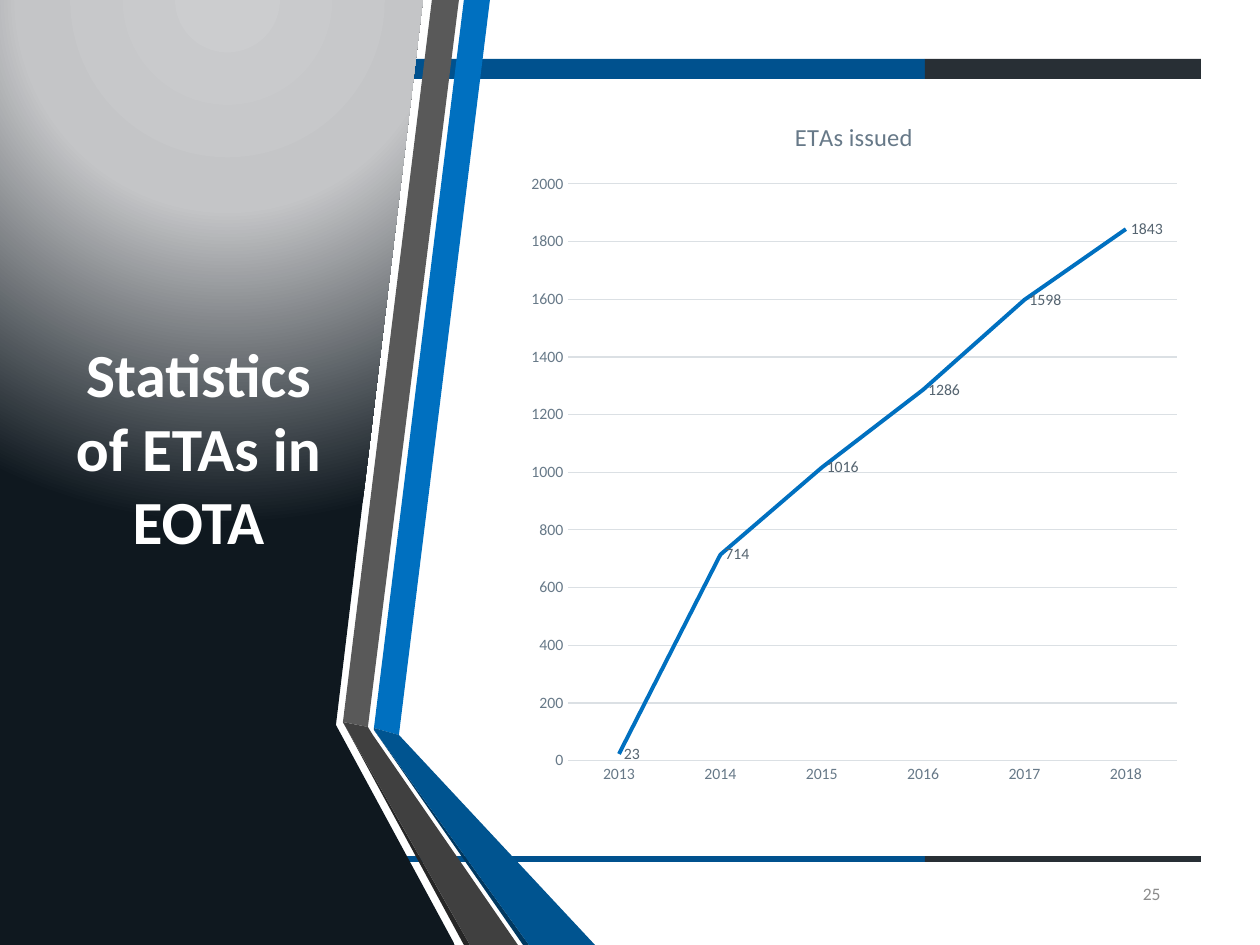
from lxml import etree
from pptx import Presentation
from pptx.chart.data import CategoryChartData
from pptx.dml.color import RGBColor
from pptx.enum.chart import XL_CHART_TYPE, XL_LABEL_POSITION, XL_MARKER_STYLE, XL_TICK_MARK
from pptx.enum.shapes import MSO_SHAPE
from pptx.enum.text import MSO_ANCHOR, MSO_AUTO_SIZE, PP_ALIGN
from pptx.oxml import parse_xml
from pptx.oxml.ns import nsdecls, qn
from pptx.util import Emu, Inches, Pt

EMU_PER_PX = 914400 / 126
FONT = "Calibri"
RECTANGLE = MSO_SHAPE.RECTANGLE
LINE_CHART = XL_CHART_TYPE.LINE
LABEL_RIGHT = XL_LABEL_POSITION.RIGHT
NO_MARKER = XL_MARKER_STYLE.NONE
NO_TICK = XL_TICK_MARK.NONE
MIDDLE = MSO_ANCHOR.MIDDLE
FIXED_SIZE = MSO_AUTO_SIZE.NONE
CENTER, RIGHT = PP_ALIGN.CENTER, PP_ALIGN.RIGHT

WHITE = RGBColor(0xFF, 0xFF, 0xFF)
BAR_BLUE = RGBColor(0x00, 0x51, 0x8E)
INK = RGBColor(0x28, 0x2F, 0x35)
BLUE = RGBColor(0x00, 0x70, 0xC0)
FOLD_BLUE = RGBColor(0x00, 0x54, 0x90)
NAVY = RGBColor(0x00, 0x38, 0x60)
GRAY = RGBColor(0x59, 0x59, 0x59)
FOLD_GRAY = RGBColor(0x40, 0x40, 0x40)
CHARCOAL = RGBColor(0x26, 0x26, 0x26)
NUMBER_GRAY = RGBColor(0x8C, 0x8C, 0x8C)
AXIS_TEXT = RGBColor(0x67, 0x79, 0x88)
LABEL_TEXT = RGBColor(0x55, 0x64, 0x70)
GRID = RGBColor(0xDB, 0xE0, 0xE4)
PANEL_STOPS = [
    (0, RGBColor(0xCC, 0xCD, 0xCF)),
    (40, RGBColor(0xC4, 0xC5, 0xC7)),
    (100, RGBColor(0x0F, 0x18, 0x1F)),
]


def px(value):
    return Emu(round(value * EMU_PER_PX))


class SlideBuilder:
    def __init__(self, slide):
        self.slide = slide
        self.shapes = slide.shapes

    def style_font(self, font, size, color, bold=False):
        font.name, font.size, font.bold = FONT, Pt(size), bold
        font.color.rgb = color

    def paint(self, shape, color):
        shape.shadow.inherit = False
        shape.fill.solid()
        shape.fill.fore_color.rgb = color
        shape.line.fill.background()

    def bar(self, left, top, width, height, color):
        shape = self.shapes.add_shape(RECTANGLE, px(left), px(top), px(width), px(height))
        self.paint(shape, color)

    def polygon(self, points, color):
        builder = self.shapes.build_freeform(*points[0], scale=EMU_PER_PX)
        builder.add_line_segments(points[1:], close=True)
        shape = builder.convert_to_shape()
        self.paint(shape, color)
        return shape

    def radial_polygon(self, points, stops):
        shape = self.polygon(points, stops[-1][1])
        gradient = parse_xml(
            f'<a:gradFill {nsdecls("a")} rotWithShape="1"><a:gsLst/><a:path path="circle">'
            '<a:fillToRect l="50000" t="-80000" r="50000" b="180000"/></a:path></a:gradFill>')
        for position, color in stops:
            stop = etree.SubElement(gradient[0], qn("a:gs"), pos=str(position * 1000))
            etree.SubElement(stop, qn("a:srgbClr"), val=str(color))
        properties = shape._element.spPr
        properties.replace(properties.find(qn("a:solidFill")), gradient)

    def set_text(self, shape, text, size, color, align, bold=False):
        frame = shape.text_frame
        frame.text = text
        frame.word_wrap = True
        frame.auto_size = FIXED_SIZE
        frame.vertical_anchor = MIDDLE
        frame.paragraphs[0].alignment = align
        self.style_font(frame.paragraphs[0].runs[0].font, size, color, bold)

    def title(self, text, left, top, width, height):
        title = self.shapes.title
        title.left, title.top, title.width, title.height = map(px, (left, top, width, height))
        self.set_text(title, text, 35, WHITE, CENTER, bold=True)
        # Bring the title in front of the panel
        self.shapes._spTree.append(title._element)

    def page_number(self, text, left, top, width, height):
        box = self.shapes.add_textbox(px(left), px(top), px(width), px(height))
        self.set_text(box, text, 10, NUMBER_GRAY, RIGHT)
        box.text_frame.paragraphs[0].space_after = Pt(6)

    def line_chart(self, name, values, left, top, width, height):
        data = CategoryChartData()
        data.categories = list(values)
        data.add_series(name, list(values.values()))
        chart = self.shapes.add_chart(
            LINE_CHART, px(left), px(top), px(width), px(height), data).chart
        self.style_font(chart.font, 10, INK)
        chart.has_legend = False
        chart.has_title = True
        heading = chart.chart_title.text_frame
        heading.text = name
        self.style_font(heading.paragraphs[0].runs[0].font, 14, AXIS_TEXT)

        # Axes
        years, counts = chart.category_axis, chart.value_axis
        for axis in (years, counts):
            axis.major_tick_mark = axis.minor_tick_mark = NO_TICK
            self.style_font(axis.tick_labels.font, 9, AXIS_TEXT)
        counts.minimum_scale, counts.maximum_scale, counts.major_unit = 0, 2000, 200
        counts.has_major_gridlines = True
        counts.format.line.fill.background()
        for line in (years.format.line, counts.major_gridlines.format.line):
            line.color.rgb = GRID
            line.width = Pt(0.75)

        # Series and its value labels
        plot = chart.plots[0]
        plot.vary_by_categories = False
        series = plot.series[0]
        series.smooth = False
        series.marker.style = NO_MARKER
        series.format.line.color.rgb = BLUE
        series.format.line.width = Pt(2.25)
        labels = series.data_labels
        labels.show_value = True
        labels.position = LABEL_RIGHT
        self.style_font(labels.font, 9, LABEL_TEXT)


def main():
    deck = Presentation()
    deck.slide_width, deck.slide_height = Inches(10), Inches(7.5)
    page = SlideBuilder(deck.slides.add_slide(deck.slide_layouts[5]))

    # Two-tone bars above and below the content
    for top, height in ((59, 20), (856, 6)):
        page.bar(59, top, 866, height, BAR_BLUE)
        page.bar(925, top, 276, height, INK)

    # Title panel
    page.radial_polygon(
        [(0, 0), (423, 0), (336, 725), (455, 945), (0, 945)], PANEL_STOPS)

    # Folded ribbons beside the panel
    page.polygon([(374, 728), (399, 735), (490, 0), (464, 0)], BLUE)
    page.polygon([(459, 0), (432, 0), (343, 722), (368, 727)], GRAY)
    page.polygon([(343, 722), (464, 945), (470, 945)], CHARCOAL)
    page.polygon([(374, 730), (523, 945), (529, 945)], NAVY)
    page.polygon([(374, 730), (529, 945), (595, 945), (399, 735), (374, 728)], FOLD_BLUE)
    page.polygon([(518, 945), (373, 735), (368, 727), (343, 722), (470, 945)], FOLD_GRAY)

    # Content
    page.title("Statistics of ETAs in EOTA", 55, 95, 287, 703)
    page.page_number("25", 1061, 869, 112, 50)
    issued = {"2013": 23, "2014": 714, "2015": 1016,
              "2016": 1286, "2017": 1598, "2018": 1843}
    page.line_chart("ETAs issued", issued, 518, 95, 672, 703)

    deck.save("out.pptx")


if __name__ == "__main__":
    main()
